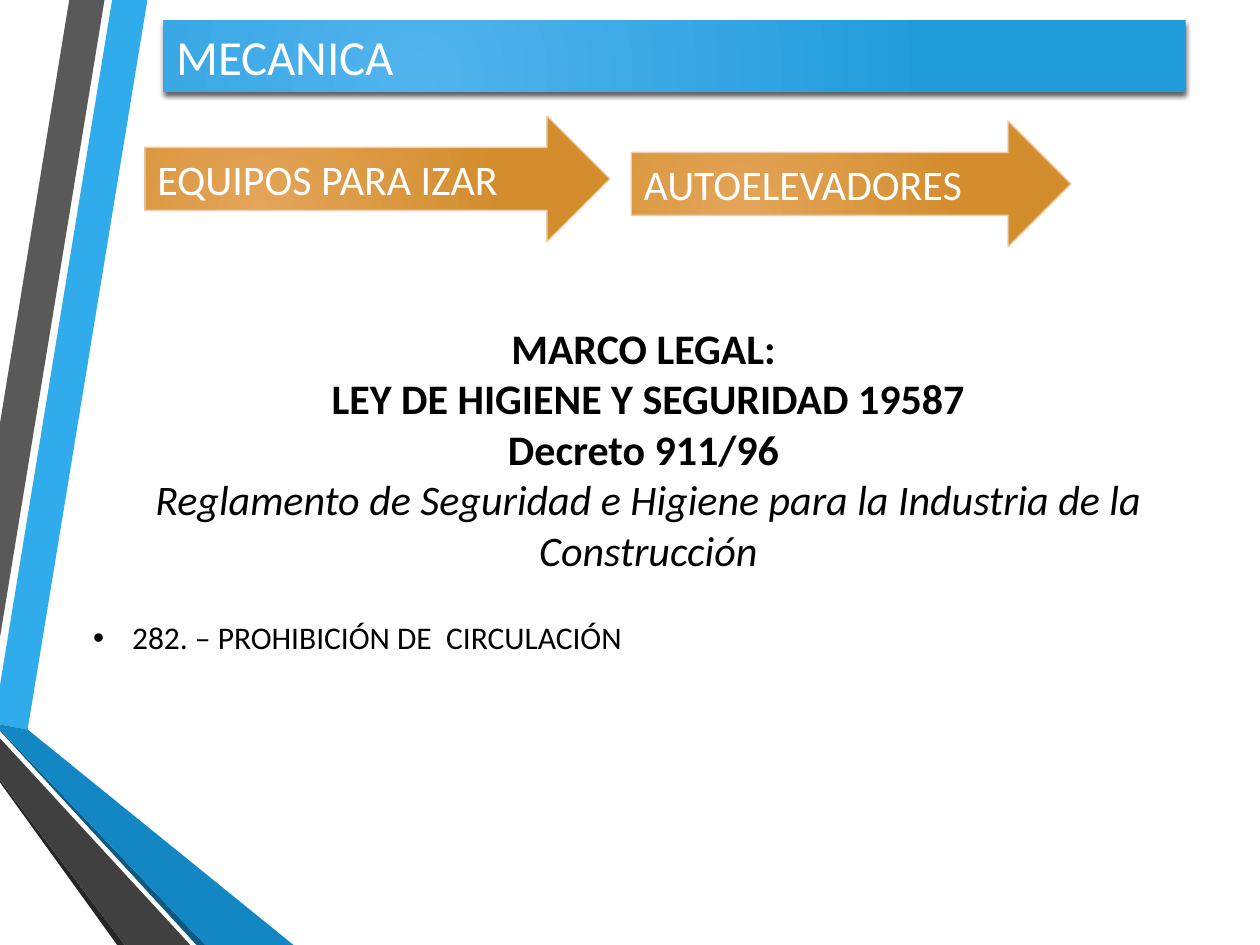
from lxml.etree import SubElement
from pptx import Presentation
from pptx.dml.color import RGBColor
from pptx.enum.shapes import MSO_SHAPE as SHAPE
from pptx.enum.text import MSO_ANCHOR as ANCHOR, MSO_AUTO_SIZE as AUTO, PP_ALIGN as ALIGN
from pptx.oxml.ns import qn
from pptx.util import Inches, Pt

WIDTH, HEIGHT = Inches(10), Inches(7.5)
COLS, ROWS = 100, 75
FONT = "Calibri"
COLORS = {
    "sky": "30ACEC", "blue": "1287C3", "navy": "0C5A82",
    "gray": "595959", "dark": "404040", "black": "262626",
    "bar_in": "51B3ED", "bar_out": "219CDB",
    "arrow_in": "E4A559", "arrow_out": "D38D2D", "arrow_line": "EECCAF",
    "white": "FFFFFF", "text": "000000", "shadow": "000000",
}
# Outlines in grid columns and rows, from back to front
RIBBONS = [
    ("sky", [(0, 54.4), (0, 57.5), (2.2, 57.9), (11.7, 0), (8.9, 0)]),
    ("gray", [(8.3, 0), (5.5, 0), (0, 33.6), (0, 50.6)]),
    ("black", [(0, 61.9), (0, 62.1), (9.3, 75), (9.9, 75)]),
    ("navy", [(0, 57.9), (0, 58), (15.6, 75), (16.3, 75)]),
    ("blue", [(0, 57.9), (16.3, 75), (23.3, 75), (2.2, 57.9), (0, 57.5)]),
    ("dark", [(0, 61.9), (9.9, 75), (15.1, 75), (0, 58.6)]),
]


def rgb(name):
    return RGBColor.from_string(COLORS[name])


def col(n):
    return round(WIDTH * n / COLS)


def row(n):
    return round(HEIGHT * n / ROWS)


def emu(box):
    x, y, w, h = box
    return col(x), row(y), col(w), row(h)


def add_text(tf, text, size=24, color="text", bold=False, italic=False,
             align=ALIGN.LEFT, first=True):
    p = tf.paragraphs[0] if first else tf.add_paragraph()
    p.alignment = align
    r = p.add_run()
    r.text = text
    f = r.font
    f.name, f.size, f.bold, f.italic = FONT, Pt(size), bold, italic
    f.color.rgb = rgb(color)
    return p


def fill_radial(sp, inner, outer):
    """Fill with a circular gradient centred low in the shape."""
    sp.fill.gradient()
    for stop, name in zip(sp.fill.gradient_stops, (inner, outer)):
        stop.color.rgb = rgb(name)
    grad = sp._element.spPr.find(qn("a:gradFill"))
    grad.remove(grad.find(qn("a:lin")))
    path = SubElement(grad, qn("a:path"), path="circle")
    SubElement(path, qn("a:fillToRect"), l="50000", t="100000", r="100000", b="50000")


def add_shadow(sp):
    sp.shadow.inherit = False
    effects = sp._element.spPr.find(qn("a:effectLst"))
    outer = SubElement(effects, qn("a:outerShdw"), blurRad=str(Pt(3)), dist=str(Pt(2)),
                       dir="5400000", algn="ctr", rotWithShape="0")
    color = SubElement(outer, qn("a:srgbClr"), val=COLORS["shadow"])
    SubElement(color, qn("a:alpha"), val="64000")


def draw_ribbons(slide, box):
    left, top = box[:2]
    for color, outline in RIBBONS:
        points = [(col(left + x), row(top + y)) for x, y in outline]
        builder = slide.shapes.build_freeform(*points[0], scale=1.0)
        builder.add_line_segments(points[1:], close=True)
        sp = builder.convert_to_shape()
        sp.shadow.inherit = False
        sp.fill.solid()
        sp.fill.fore_color.rgb = rgb(color)
        sp.line.fill.background()


def place_title(slide, box, text):
    sp = slide.shapes.title
    sp.left, sp.top, sp.width, sp.height = emu(box)
    fill_radial(sp, "bar_in", "bar_out")
    add_shadow(sp)
    tf = sp.text_frame
    tf.auto_size = AUTO.NONE
    tf.vertical_anchor = ANCHOR.MIDDLE
    add_text(tf, text, size=28, color="white")


def draw_arrow(slide, box, text):
    sp = slide.shapes.add_shape(SHAPE.RIGHT_ARROW, *emu(box))
    sp.shadow.inherit = False
    fill_radial(sp, "arrow_in", "arrow_out")
    sp.line.color.rgb = rgb("arrow_line")
    sp.line.width = Pt(0.75)
    tf = sp.text_frame
    tf.word_wrap = True
    tf.vertical_anchor = ANCHOR.MIDDLE
    add_text(tf, text, color="white")


def add_text_box(slide, box):
    tf = slide.shapes.add_textbox(*emu(box)).text_frame
    tf.word_wrap = True
    return tf


def write_legal_frame(slide, box, headings, regulation):
    tf = add_text_box(slide, box)
    for i, heading in enumerate(headings):
        add_text(tf, heading, bold=True, align=ALIGN.CENTER, first=i == 0)
    add_text(tf, regulation, italic=True, align=ALIGN.CENTER, first=False)


def write_articles(slide, box, articles):
    tf = add_text_box(slide, box)
    indent = col(3.1)
    for i, article in enumerate(articles):
        pPr = add_text(tf, article, size=18, first=i == 0)._p.get_or_add_pPr()
        pPr.set("marL", str(indent))
        pPr.set("indent", str(-indent))
        SubElement(pPr, qn("a:buFont"), typeface="Arial")
        SubElement(pPr, qn("a:buChar"), char="•")


def main():
    prs = Presentation()
    prs.slide_width, prs.slide_height = WIDTH, HEIGHT
    s = prs.slides.add_slide(prs.slide_layouts[5])
    draw_ribbons(s, (0, 0, 23.3, ROWS))
    draw_arrow(s, (11.5, 9.2, 36.9, 10), "EQUIPOS PARA IZAR")
    place_title(s, (13, 1.6, 81.1, 5.7), "MECANICA")
    write_legal_frame(
        s, (6.4, 25.1, 90.1, 21.2),
        ["MARCO LEGAL: ", "LEY DE HIGIENE Y SEGURIDAD 19587", "Decreto 911/96 "],
        "Reglamento de Seguridad e Higiene para la Industria de la Construcción")
    write_articles(s, (6.4, 48.6, 90.1, 4), ["282. – PROHIBICIÓN DE  CIRCULACIÓN"])
    draw_arrow(s, (50.1, 9.6, 34.9, 10), "AUTOELEVADORES")
    prs.save("out.pptx")


if __name__ == "__main__":
    main()
